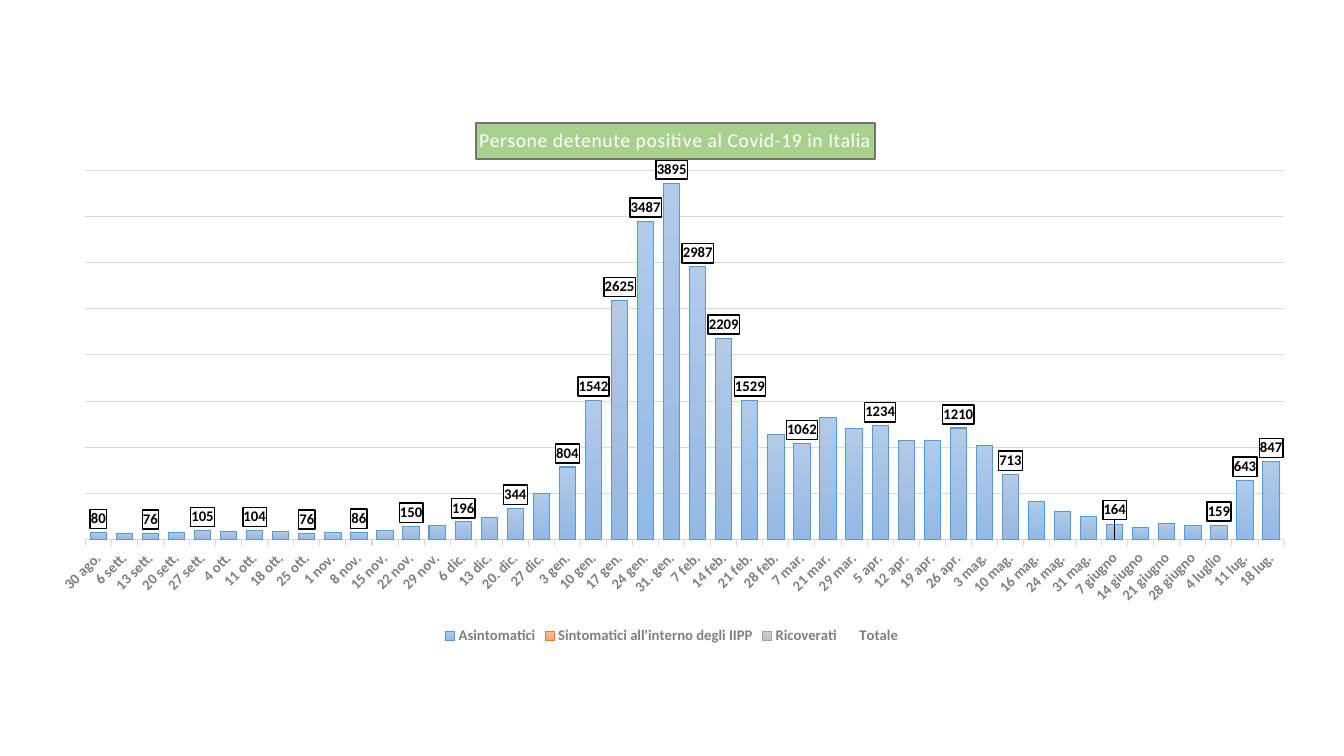
"""Build a slide with a stacked column chart of Covid-19 cases in Italian prisons."""
from copy import deepcopy
from pptx import Presentation
from pptx.chart.data import CategoryChartData
from pptx.dml.color import RGBColor
from pptx.enum.chart import XL_CHART_TYPE, XL_LABEL_POSITION, XL_LEGEND_POSITION, XL_TICK_LABEL_POSITION, XL_TICK_MARK
from pptx.oxml import parse_xml
from pptx.oxml.ns import nsdecls
from pptx.util import Inches, Pt

TITLE = "Persone detenute positive al Covid-19 in Italia"
DATES = [
    "30 ago.", "6 sett.", "13 sett.", "20 sett.", "27 sett.", "4 ott.", "11 ott.", "18 ott.",
    "25 ott.", "1 nov.", "8 nov.", "15 nov.", "22 nov.", "29 nov.", "6 dic.", "13 dic.",
    "20. dic.", "27 dic.", "3 gen.", "10 gen.", "17 gen.", "24 gen.", "31. gen.", "7 feb.",
    "14 feb.", "21 feb.", "28 feb.", "7 mar.", "21 mar.", "29 mar.", "5 apr.", "12 apr.",
    "19 apr.", "26 apr.", "3 mag.", "10 mag.", "16 mag.", "24 mag.", "31 mag.", "7 giugno",
    "14 giugno", "21 giugno", "28 giugno", "4 luglio", "11 lug.", "18 lug.",
]
NONE = [0] * len(DATES)
SERIES = {
    "Asintomatici": [
        75, 66, 71, 76, 100, 93, 100, 90, 71, 74, 81, 98, 146, 158, 193, 236, 339, 501, 786,
        1511, 2586, 3448, 3859, 2953, 2181, 1510, 1138, 1040, 1322, 1199, 1232, 1078, 1068,
        1208, 1020, 707, 417, 300, 254, 164, 130, 177, 158, 158, 642, 846],
    "Sintomatici all'interno degli IIPP": NONE,
    "Ricoverati": NONE,
    "Totale": [
        80, 70, 76, 83, 105, 97, 104, 95, 76, 79, 86, 103, 150, 162, 196, 239, 344, 510, 804,
        1542, 2625, 3487, 3895, 2987, 2209, 1529, 1160, 1062, 1341, 1208, 1234, 1080, 1069,
        1210, 1022, 713, 420, 302, 256, 164, 130, 178, 159, 159, 643, 847],
}
MUTED = [*range(1, 18, 2), 26, 28, 29, 31, 32, 34, *range(36, 43)]
JUNE = DATES.index("7 giugno")
THEME = {
    "font": "Calibri", "base": 10, "small": 10.5, "head": 14,
    "ink": "000000", "grey": "808080", "rule": "D9D9D9", "white": "FFFFFF",
    "green": "A9D18E", "edge": "767171",
    "bars": [
        (("B1CBE9", "A3C1E5", "93B9E4"), "5998D0"),
        (("F7BDA5", "F5B196", "F8A582"), "E87A30"),
        (("D2D2D2", "C8C8C8", "C0C0C0"), "A1A1A1"),
    ],
}
WIDE, HIGH = 13.33, 7.5
FRAME = (0.34, 1.07, 12.65, 5.37)
PLOT = {"x": 0.04, "y": 0.115, "w": 0.94, "h": 0.683}
HEAD = {"x": 0.346, "y": 0.028}


def paint(font, size, color, bold=False):
    font.name, font.size, font.bold = THEME["font"], Pt(size), bold
    font.color.rgb = RGBColor.from_string(color)


def write(frame, text, size, color, bold=False, gap=0):
    frame.text = text
    run = frame.paragraphs[0].runs[0]
    paint(run.font, size, color, bold)
    run.font._element.set("spc", str(gap))


def stroke(line, color, width=0.75):
    line.color.rgb = RGBColor.from_string(color)
    line.width = Pt(width)


def layout(inner=False, edge=True, **box):
    parts = '<c:layoutTarget val="inner"/>' if inner else ""
    if edge:
        parts += "".join(f'<c:{k}Mode val="edge"/>' for k in "xy")
    parts += "".join(f'<c:{k} val="{v}"/>' for k, v in box.items())
    return parse_xml(f'<c:layout {nsdecls("c")}><c:manualLayout>{parts}</c:manualLayout></c:layout>')


def label(item, row):
    paint(item.font, THEME["small"], THEME["ink"], True)
    item.position = XL_LABEL_POSITION.INSIDE_BASE
    row._element.xpath(".//c:dLbls//c:txPr")[0].addprevious(parse_xml(
        f'<c:spPr {nsdecls("c", "a")}><a:solidFill><a:srgbClr val="{THEME["white"]}"/></a:solidFill>'
        f'<a:ln w="12700"><a:solidFill><a:srgbClr val="{THEME["ink"]}"/></a:solidFill></a:ln></c:spPr>'))


def shade(row, tones, edge):
    fill = row.format.fill
    fill.gradient()
    fill.gradient_angle = 270
    stops = row._element.xpath(".//a:gsLst")[0]
    stops.insert(1, deepcopy(stops[0]))
    for spot, (stop, tone) in enumerate(zip(fill.gradient_stops, tones)):
        stop.color.rgb = RGBColor.from_string(tone)
        stop.position = spot / 2
    stroke(row.format.line, edge)


def axes(chart):
    days, count = chart.category_axis, chart.value_axis
    paint(days.tick_labels.font, THEME["small"], THEME["grey"], True)
    days._element.xpath("./c:txPr/a:bodyPr")[0].set("rot", "-2700000")
    days.major_tick_mark = XL_TICK_MARK.OUTSIDE
    days.tick_label_position = XL_TICK_LABEL_POSITION.LOW
    stroke(days.format.line, THEME["rule"])
    count.minimum_scale, count.maximum_scale, count.major_unit = 0, 4000, 500
    count.has_major_gridlines = True
    stroke(count.major_gridlines.format.line, THEME["rule"])
    count.visible = False


def heading(chart):
    title = chart.chart_title
    write(title.text_frame, TITLE, THEME["head"], THEME["white"], gap=30)
    title.format.fill.solid()
    title.format.fill.fore_color.rgb = RGBColor.from_string(THEME["green"])
    stroke(title.format.line, THEME["edge"], 1.5)
    for old in title._element.xpath("./c:layout"):
        title._element.remove(old)
    title._element.xpath("./c:tx")[0].addnext(layout(**HEAD))


def bars(chart):
    plot = chart.plots[0]
    plot.gap_width, plot.overlap, plot.vary_by_categories = 60, 100, False
    *cases, total = plot.series
    for row, (tones, edge) in zip(cases, THEME["bars"]):
        shade(row, tones, edge)
    total.format.fill.background()
    total.format.line.fill.background()
    label(cases[0].points[JUNE].data_label, cases[0])
    cases[0]._element.xpath(".//c:dLbl/c:idx")[0].addnext(layout(edge=False, x=0, y=-0.03))
    tags = total.data_labels
    tags.show_value = True
    label(tags, total)
    for spot, day in enumerate(MUTED):
        tags._element.insert(spot, parse_xml(
            f'<c:dLbl {nsdecls("c")}><c:idx val="{day}"/><c:delete val="1"/></c:dLbl>'))


def main():
    deck = Presentation()
    deck.slide_width, deck.slide_height = Inches(WIDE), Inches(HIGH)
    slide = deck.slides.add_slide(deck.slide_layouts[6])
    data = CategoryChartData()
    data.categories = DATES
    for name, vals in SERIES.items():
        data.add_series(name, vals)
    chart = slide.shapes.add_chart(
        XL_CHART_TYPE.COLUMN_STACKED, *map(Inches, FRAME), data).chart
    paint(chart.font, THEME["base"], THEME["ink"])
    heading(chart)
    bars(chart)
    axes(chart)
    area = chart._chartSpace.xpath("./c:chart/c:plotArea")[0]
    for old in area.xpath("./c:layout"):
        area.remove(old)
    area.insert(0, layout(inner=True, **PLOT))
    chart.has_legend = True
    chart.legend.position = XL_LEGEND_POSITION.BOTTOM
    chart.legend.include_in_layout = False
    paint(chart.legend.font, THEME["small"], THEME["grey"], True)
    deck.save("out.pptx")


if __name__ == "__main__":
    main()
